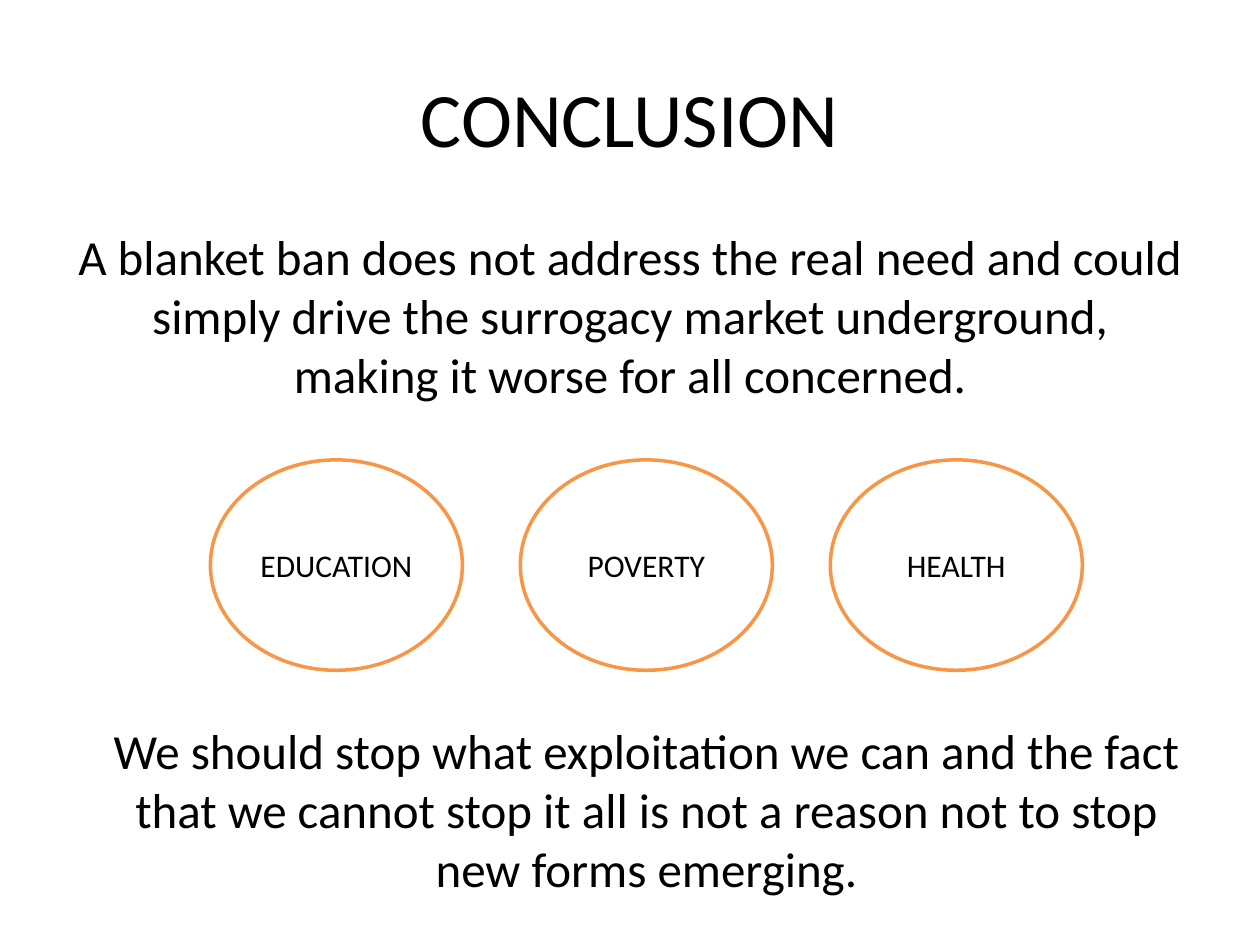
from pptx import Presentation
from pptx.dml.color import RGBColor
from pptx.enum.shapes import MSO_SHAPE
from pptx.enum.text import MSO_ANCHOR, PP_ALIGN
from pptx.util import Inches, Pt

OVAL = MSO_SHAPE.OVAL
TOP, MIDDLE = MSO_ANCHOR.TOP, MSO_ANCHOR.MIDDLE
CENTER = PP_ALIGN.CENTER

FONT = "Calibri"
BLACK, WHITE, ORANGE = "000000", "FFFFFF", "F79646"

# text, (left, top, width, height), size, anchor, space before
TEXTS = [
    ("CONCLUSION", (0.5, 0.3, 9, 1.25), 44, MIDDLE, 0),
    ("A blanket ban does not address the real need and could simply drive "
     "the surrogacy market underground, making it worse for all concerned.",
     (0.5, 1.75, 9, 1.58), 28, TOP, 5.6),
    ("We should stop what exploitation we can and the fact that we cannot "
     "stop it all is not a reason not to stop new forms emerging.",
     (0.63, 5.67, 9, 1.58), 28, TOP, 5.6),
]
CAUSES = ["EDUCATION", "POVERTY", "HEALTH"]
OVAL_LEFT, OVAL_TOP, OVAL_WIDTH, OVAL_HEIGHT = 1.67, 3.65, 2, 1.67
OVAL_STEP = 2.46


def color(value):
    return RGBColor.from_string(value)


def write(shape, text, size, anchor, space_before=0):
    frame = shape.text_frame
    frame.word_wrap = True
    frame.vertical_anchor = anchor
    paragraph = frame.paragraphs[0]
    paragraph.text = text
    paragraph.alignment = CENTER
    paragraph.space_before = Pt(space_before)
    font = paragraph.runs[0].font
    for name, value in {"name": FONT, "size": Pt(size)}.items():
        setattr(font, name, value)
    font.color.rgb = color(BLACK)


def add_cause(slide, index, text):
    left = OVAL_LEFT + index * OVAL_STEP
    box = (left, OVAL_TOP, OVAL_WIDTH, OVAL_HEIGHT)
    shape = slide.shapes.add_shape(OVAL, *map(Inches, box))
    shape.shadow.inherit = False
    shape.fill.solid()
    shape.fill.fore_color.rgb = color(WHITE)
    shape.line.color.rgb = color(ORANGE)
    shape.line.width = Pt(2)
    write(shape, text, 18, MIDDLE)


def main():
    presentation = Presentation()
    presentation.slide_width, presentation.slide_height = Inches(10), Inches(7.5)
    slide = presentation.slides.add_slide(presentation.slide_layouts[6])
    for text, box, size, anchor, space_before in TEXTS:
        text_box = slide.shapes.add_textbox(*map(Inches, box))
        write(text_box, text, size, anchor, space_before)
    for index, cause in enumerate(CAUSES):
        add_cause(slide, index, cause)
    presentation.save("out.pptx")


if __name__ == "__main__":
    main()
